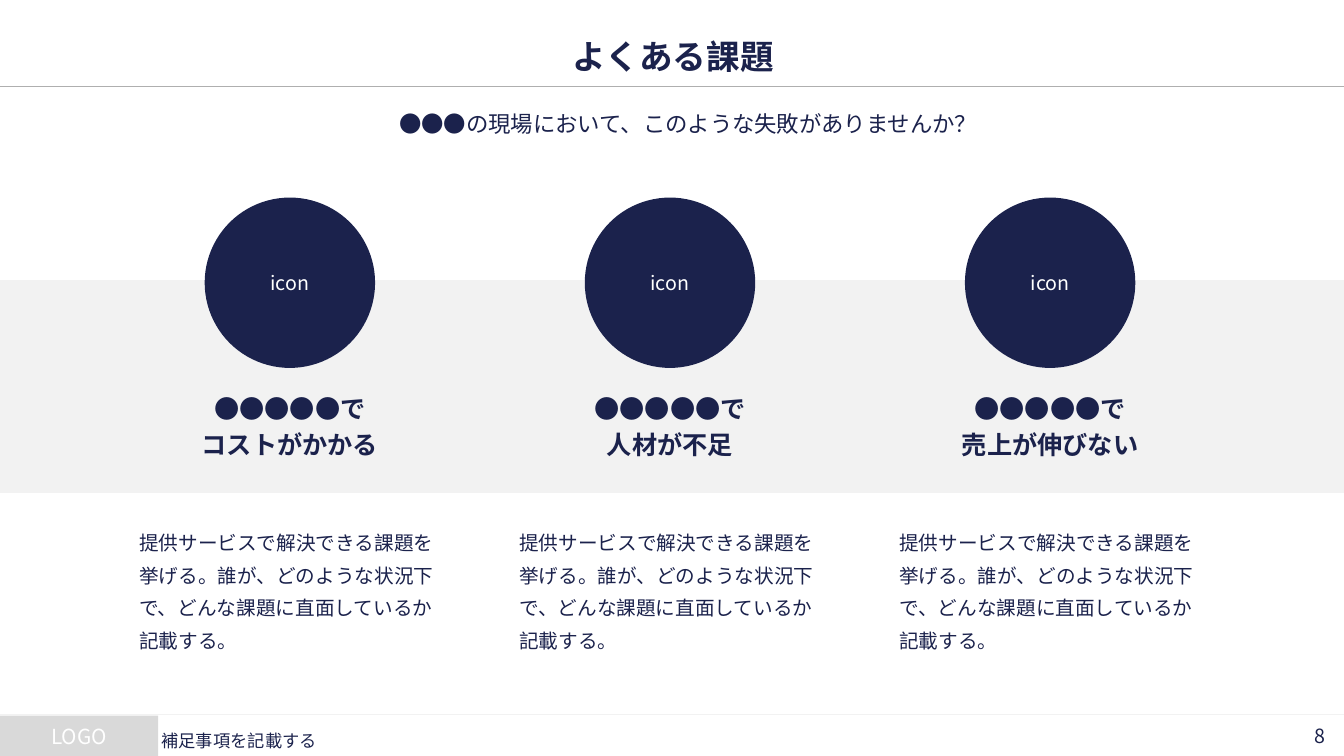
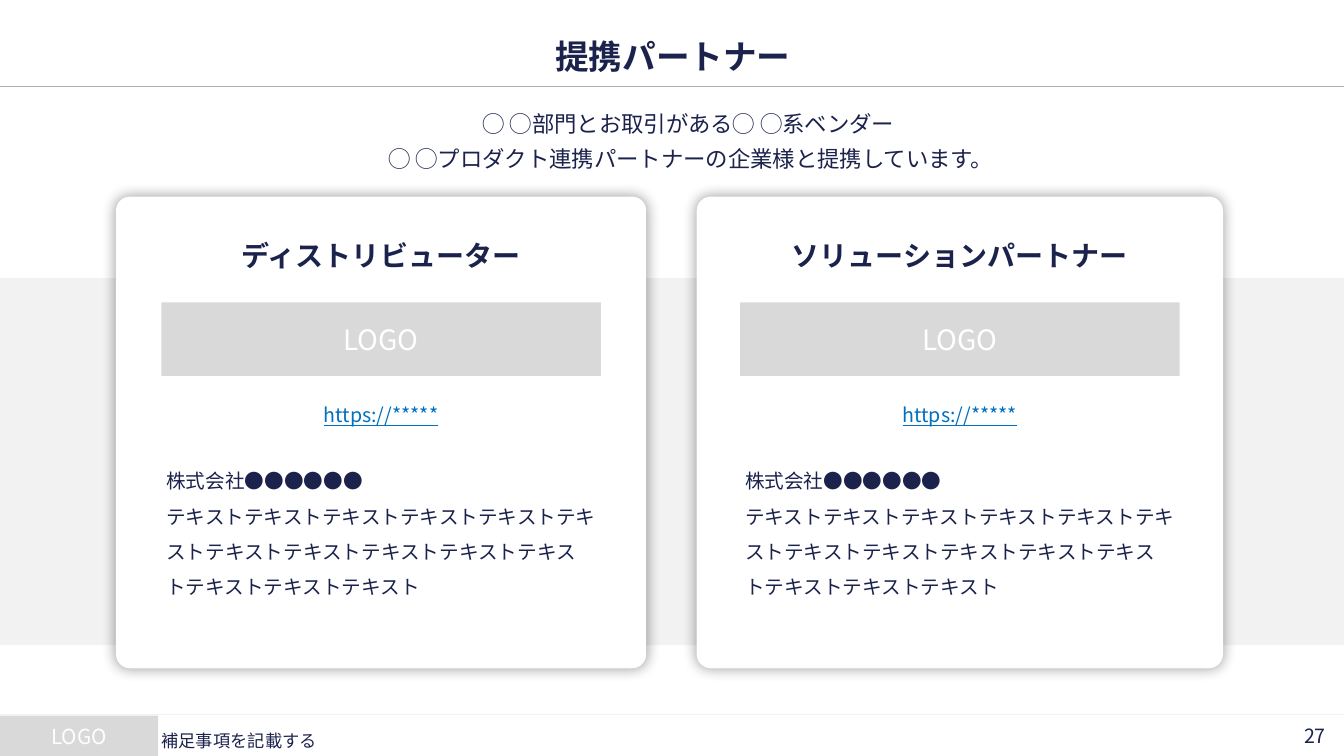
from collections import namedtuple
from dataclasses import dataclass

from lxml import etree
from pptx import Presentation
from pptx import util as u
from pptx.dml.color import RGBColor
from pptx.enum import shapes, text
from pptx.oxml import ns


@dataclass(frozen=True)
class Theme:
    font: str = "Noto Sans CJK JP"
    navy: str = "1B224C"
    white: str = "FFFFFF"
    band: str = "F2F2F2"
    logo: str = "D9D9D9"
    rule: str = "AFAFAF"
    link: str = "0070C0"
    title: float = 24
    card_title: float = 20
    heading: float = 18
    lead: float = 16
    footer_logo: float = 14.8
    body: float = 14
    note: float = 12.3


THEME = Theme()
WIDTH, HEIGHT = 13.33, 7.5
FOOTER_TOP = 7.1
LEFT, CENTER, RIGHT = text.PP_ALIGN.LEFT, text.PP_ALIGN.CENTER, text.PP_ALIGN.RIGHT
TOP, MIDDLE = text.MSO_ANCHOR.TOP, text.MSO_ANCHOR.MIDDLE
RECT, OVAL = shapes.MSO_SHAPE.RECTANGLE, shapes.MSO_SHAPE.OVAL
ROUNDED = shapes.MSO_SHAPE.ROUNDED_RECTANGLE


class Box(namedtuple("Box", "left top width height")):
    def emu(self):
        return [u.Inches(length) for length in self]

    def row(self, offset, height, width=None):
        """A centred row, offset inches below the top of this box."""
        width = width or self.width
        left = self.left + (self.width - width) / 2
        return Box(left, self.top + offset, width, height)


def add_xml(parent, tag, **attributes):
    return etree.SubElement(parent, ns.qn(tag), attributes)


def write(frame, content, size=THEME.body, color=THEME.navy, bold=False,
          underline=False, align=LEFT, anchor=TOP, insets=(0.04,) * 4,
          spacing=None, after=None, hanging=None):
    """Fill a text frame; each line of content is a paragraph."""
    frame.word_wrap = True
    frame.vertical_anchor = anchor
    (frame.margin_left, frame.margin_top,
     frame.margin_right, frame.margin_bottom) = map(u.Inches, insets)
    for index, line in enumerate(content.split("\n")):
        paragraph = frame.add_paragraph() if index else frame.paragraphs[0]
        paragraph.alignment = align
        if spacing:
            paragraph.line_spacing = spacing
        if after:
            paragraph.space_after = u.Pt(after)
        if hanging:
            properties = paragraph._p.get_or_add_pPr()
            properties.set("marL", str(u.Inches(2 * hanging)))
            properties.set("indent", str(-u.Inches(hanging)))
        run = paragraph.add_run()
        run.text = line
        font = run.font
        font.name, font.size = THEME.font, u.Pt(size)
        font.bold, font.underline = bold, underline
        font.color.rgb = RGBColor.from_string(color)
        add_xml(run._r.get_or_add_rPr(), "a:ea", typeface=THEME.font)


def add_text(slide, box, content, **style):
    write(slide.shapes.add_textbox(*box.emu()).text_frame, content, **style)


def add_block(slide, kind, box, fill, label=None, **style):
    block = slide.shapes.add_shape(kind, *box.emu())
    block.shadow.inherit = False
    block.fill.solid()
    block.fill.fore_color.rgb = RGBColor.from_string(fill)
    block.line.fill.background()
    if label:
        write(block.text_frame, label, color=THEME.white, align=CENTER,
              anchor=MIDDLE, **style)
    return block


def add_rule(slide, top, color):
    rule = slide.shapes.add_connector(
        shapes.MSO_CONNECTOR.STRAIGHT, 0, u.Inches(top),
        u.Inches(WIDTH), u.Inches(top))
    rule.line.color.rgb = RGBColor.from_string(color)
    rule.line.width = u.Pt(0.75)
    add_xml(rule._element.spPr, "a:effectLst")


def add_glow_shadow(block):
    """Soft black shadow on all sides, 40 % opaque."""
    effects = block._element.spPr.find(ns.qn("a:effectLst"))
    shadow = add_xml(effects, "a:outerShdw", blurRad=str(u.Pt(10)), dist="0",
                     dir="0", algn="ctr", rotWithShape="0")
    add_xml(add_xml(shadow, "a:srgbClr", val="000000"), "a:alpha", val="40000")


def add_footer(slide, number):
    height = HEIGHT - FOOTER_TOP
    add_rule(slide, FOOTER_TOP - 0.01, THEME.band)
    add_block(slide, RECT, Box(0, FOOTER_TOP, 1.57, height), THEME.logo,
              "LOGO", size=THEME.footer_logo)
    add_text(slide, Box(1.56, FOOTER_TOP, 10.2, height), "補足事項を記載する",
             size=THEME.note, anchor=MIDDLE, spacing=1.5)
    add_text(slide, Box(12.51, FOOTER_TOP, 0.84, height), str(number),
             align=RIGHT, anchor=MIDDLE, insets=(0.08, 0.08, 0.2, 0.08))


def add_frame(deck, title, lead, number, band):
    """Start a slide with the title, lead, grey band and footer all share."""
    slide = deck.slides.add_slide(deck.slide_layouts[6])
    header = Box(0.86, 0.34, 11.63, 1.49)
    add_block(slide, RECT, band, THEME.band)
    add_rule(slide, 0.86, THEME.rule)
    add_text(slide, header.row(0, 0.43), title, size=THEME.title, bold=True,
             align=CENTER, anchor=MIDDLE, insets=(0.1, 0.05, 0.1, 0.05))
    add_text(slide, header.row(0.63, 0.86), lead, size=THEME.lead,
             align=CENTER, spacing=1.3, hanging=0.31)
    add_footer(slide, number)
    return slide


def add_issue(slide, box, heading, description):
    add_block(slide, OVAL, box.row(0, 1.69, 1.69), THEME.navy, "icon")
    add_text(slide, box.row(1.9, 0.85, 2.75), heading, size=THEME.heading,
             bold=True, align=CENTER, after=4)
    add_text(slide, box.row(3.17, 1.37), description, spacing=1.4, after=4)


def add_partner(slide, box, heading, address, description):
    card = add_block(slide, ROUNDED, box, THEME.white)
    card.adjustments[0] = 0.03
    add_glow_shadow(card)
    inner = 4.36
    insets = (0.05,) * 4
    add_text(slide, box.row(0.29, 0.58), heading, size=THEME.card_title,
             bold=True, align=CENTER, anchor=MIDDLE, insets=insets)
    add_block(slide, RECT, box.row(1.05, 0.73, inner), THEME.logo, "LOGO",
              size=THEME.card_title)
    add_text(slide, box.row(1.94, 0.44, inner), address, color=THEME.link,
             underline=True, align=CENTER, anchor=MIDDLE, insets=insets,
             after=4.9)
    add_text(slide, box.row(2.54, 1.83, inner), description, insets=insets,
             spacing=1.5)


def build_issues(deck):
    slide = add_frame(
        deck, "よくある課題",
        "●●●の現場において、このような失敗がありませんか？",
        8, Box(0, 2.78, WIDTH, 2.11))
    description = ("提供サービスで解決できる課題を挙げる。誰が、どのような状況下で、"
                   "どんな課題に直面しているか記載する。")
    for column, issue in enumerate(("コストがかかる", "人材が不足", "売上が伸びない")):
        box = Box(1.34 + 3.77 * column, 1.96, 3.07, 4.54)
        add_issue(slide, box, "●●●●●で\n" + issue, description)


def build_partners(deck):
    slide = add_frame(
        deck, "提携パートナー",
        "◯ ◯部門とお取引がある◯ ◯系ベンダー\n"
        " ◯ ◯プロダクト連携パートナーの企業様と提携しています。",
        27, Box(0, 2.76, WIDTH, 3.64))
    description = "株式会社●●●●●●\n" + "テキスト" * 14
    partners = (("ディストリビューター", 1.15, 5.26),
                ("ソリューションパートナー", 6.91, 5.22))
    for heading, left, width in partners:
        add_partner(slide, Box(left, 1.95, width, 4.68), heading,
                    "https://*****", description)


def main():
    deck = Presentation()
    deck.slide_width, deck.slide_height = u.Inches(WIDTH), u.Inches(HEIGHT)
    build_issues(deck)
    build_partners(deck)
    deck.save("out.pptx")


if __name__ == "__main__":
    main()
